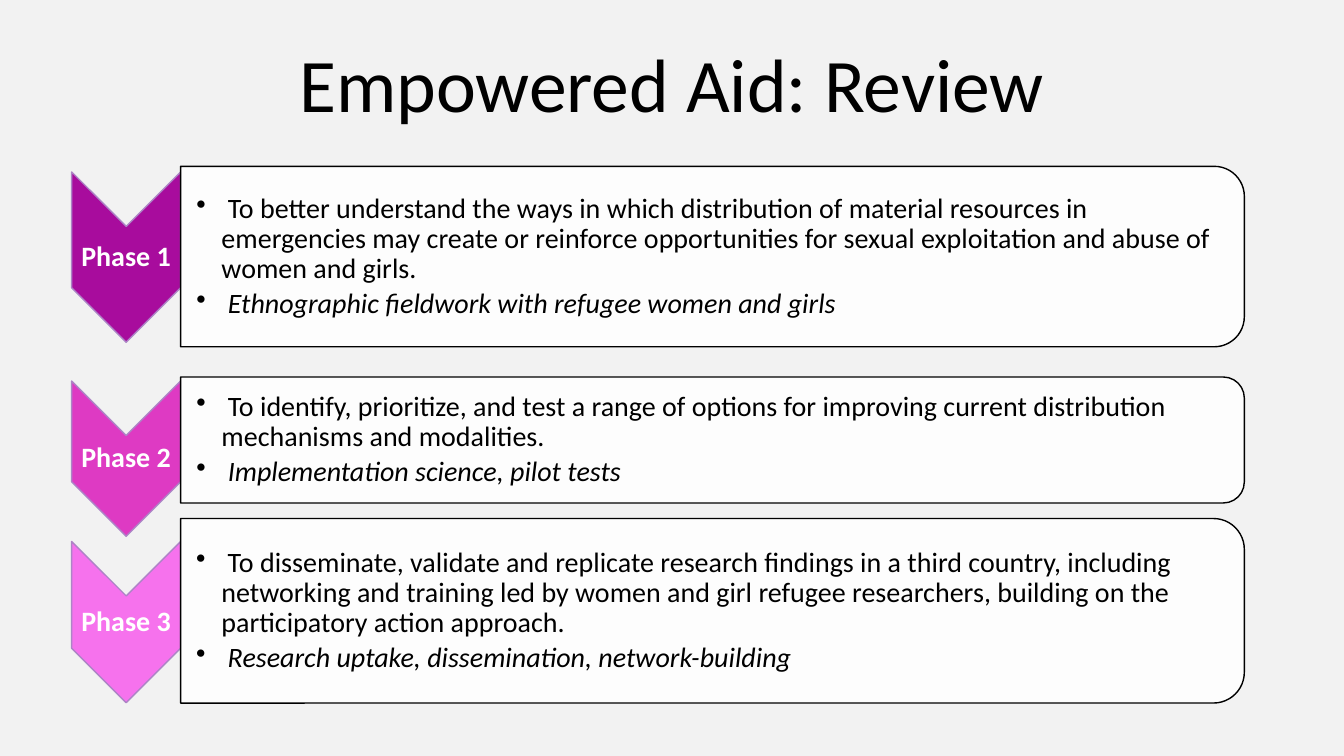
import pptx
import pptx.dml.color
import pptx.enum.shapes
import pptx.enum.text
import pptx.oxml
import pptx.oxml.ns
import pptx.util
from pptx.util import Pt

TITLE = "Empowered Aid: Review"
# Vertical extents are (top, height) in points.
PHASES = [
    {"name": "Phase 1", "color": "phase 1", "arrow": (122.8, 121.7), "card": (118.8, 128.9),
     "goal": "To better understand the ways in which distribution of material resources in "
             "emergencies may create or reinforce opportunities for sexual exploitation and "
             "abuse of women and girls.",
     "method": "Ethnographic fieldwork with refugee women and girls"},
    {"name": "Phase 2", "color": "phase 2", "arrow": (272.2, 110.9), "card": (269.3, 90),
     "goal": "To identify, prioritize, and test a range of options for improving current "
             "distribution mechanisms and modalities.",
     "method": "Implementation science, pilot tests"},
    {"name": "Phase 3", "color": "phase 3", "arrow": (386.8, 115.2), "card": (370.4, 131.8),
     "goal": "To disseminate, validate and replicate research findings in a third country, "
             "including networking and training led by women and girl refugee researchers, "
             "building on the participatory action approach.",
     "method": "Research uptake, dissemination, network-building"},
]
COLORS = {"background": "F2F2F2", "phase 1": "A80C9D", "phase 2": "DE3AC3",
          "phase 3": "F672ED", "arrow line": "AD84C6", "white": "FFFFFF", "black": "000000"}
FONT = "Calibri"
ARROW_LEFT, ARROW_WIDTH = 51.2, 77.8
CARD_LEFT, CARD_WIDTH = ARROW_LEFT + ARROW_WIDTH, 759.8
CORNER_INSET = 0.05  # share of the card height kept clear of the round corners

SHAPES = pptx.enum.shapes.MSO_SHAPE
ALIGN = pptx.enum.text.PP_ALIGN


def rgb(name):
    return pptx.dml.color.RGBColor.from_string(COLORS[name])


def add_turned_shape(slide, kind, left, top, width, height, fill, line):
    """Add a shape turned by 90 degrees; the box given is the one seen on the slide."""
    shape = slide.shapes.add_shape(kind, Pt(left + (width - height) / 2),
                                   Pt(top + (height - width) / 2), Pt(height), Pt(width))
    shape.rotation = 90
    shape.shadow.inherit = False
    shape.fill.solid()
    shape.fill.fore_color.rgb = rgb(fill)
    shape.line.color.rgb = rgb(line)
    shape.line.width = Pt(1)
    return shape


def set_opacity(shape, percent):
    color = shape.fill._xPr.find(".//" + pptx.oxml.ns.qn("a:srgbClr"))
    color.append(pptx.oxml.parse_xml(
        f'<a:alpha {pptx.oxml.ns.nsdecls("a")} val="{percent * 1000}"/>'))


def add_text(slide, left, top, width, height, lines, left_margin=0.7):
    box = slide.shapes.add_textbox(Pt(left), Pt(top), Pt(width), Pt(height))
    frame = box.text_frame
    frame.text = "\n".join(lines)
    frame.word_wrap = True
    frame.vertical_anchor = pptx.enum.text.MSO_ANCHOR.MIDDLE
    frame.margin_left = Pt(left_margin)
    frame.margin_top = frame.margin_right = frame.margin_bottom = Pt(0.7)
    for paragraph in frame.paragraphs:
        paragraph.line_spacing = 0.9
    return frame


def style(paragraph, size, color, bold=False, italic=False):
    for run in paragraph.runs:
        run.font.name = FONT
        run.font.size = Pt(size)
        run.font.color.rgb = rgb(color)
        run.font.bold = bold
        run.font.italic = italic


def add_bullet(paragraph):
    properties = paragraph._p.get_or_add_pPr()
    properties.set("marL", str(Pt(18)))
    properties.set("indent", str(-Pt(18)))
    properties.append(pptx.oxml.parse_xml(
        f'<a:buChar {pptx.oxml.ns.nsdecls("a")} char="•"/>'))


def add_phase(slide, phase):
    top, height = phase["arrow"]
    add_turned_shape(slide, SHAPES.CHEVRON, ARROW_LEFT, top, ARROW_WIDTH, height,
                     phase["color"], "arrow line")
    notch = ARROW_WIDTH / 2
    label = add_text(slide, ARROW_LEFT, top + notch, ARROW_WIDTH, height - 2 * notch,
                     [phase["name"]]).paragraphs[0]
    label.alignment = ALIGN.CENTER
    label.space_after = Pt(7)
    style(label, 20, "white", bold=True)

    top, height = phase["card"]
    card = add_turned_shape(slide, SHAPES.ROUND_2_SAME_RECTANGLE, CARD_LEFT, top,
                            CARD_WIDTH, height, "white", "black")
    set_opacity(card, 90)
    inset = height * CORNER_INSET
    frame = add_text(slide, CARD_LEFT, top + inset, CARD_WIDTH - inset, height - 2 * inset,
                     [" " + phase["goal"], " " + phase["method"]], left_margin=11.2)
    for paragraph, italic in zip(frame.paragraphs, (False, True)):
        paragraph.space_after = Pt(3)
        add_bullet(paragraph)
        style(paragraph, 20, "black", italic=italic)


def add_title(slide):
    frame = slide.shapes.add_textbox(Pt(65.5), Pt(23), Pt(828.7), Pt(72.7)).text_frame
    frame.text = TITLE
    frame.word_wrap = True
    frame.auto_size = pptx.enum.text.MSO_AUTO_SIZE.SHAPE_TO_FIT_TEXT
    frame.paragraphs[0].alignment = ALIGN.CENTER
    style(frame.paragraphs[0], 54, "black")


def main():
    presentation = pptx.Presentation()
    presentation.slide_width, presentation.slide_height = Pt(960), Pt(540)
    slide = presentation.slides.add_slide(presentation.slide_layouts[6])
    slide.background.fill.solid()
    slide.background.fill.fore_color.rgb = rgb("background")
    for phase in PHASES:
        add_phase(slide, phase)
    add_title(slide)
    presentation.save("out.pptx")


if __name__ == "__main__":
    main()
